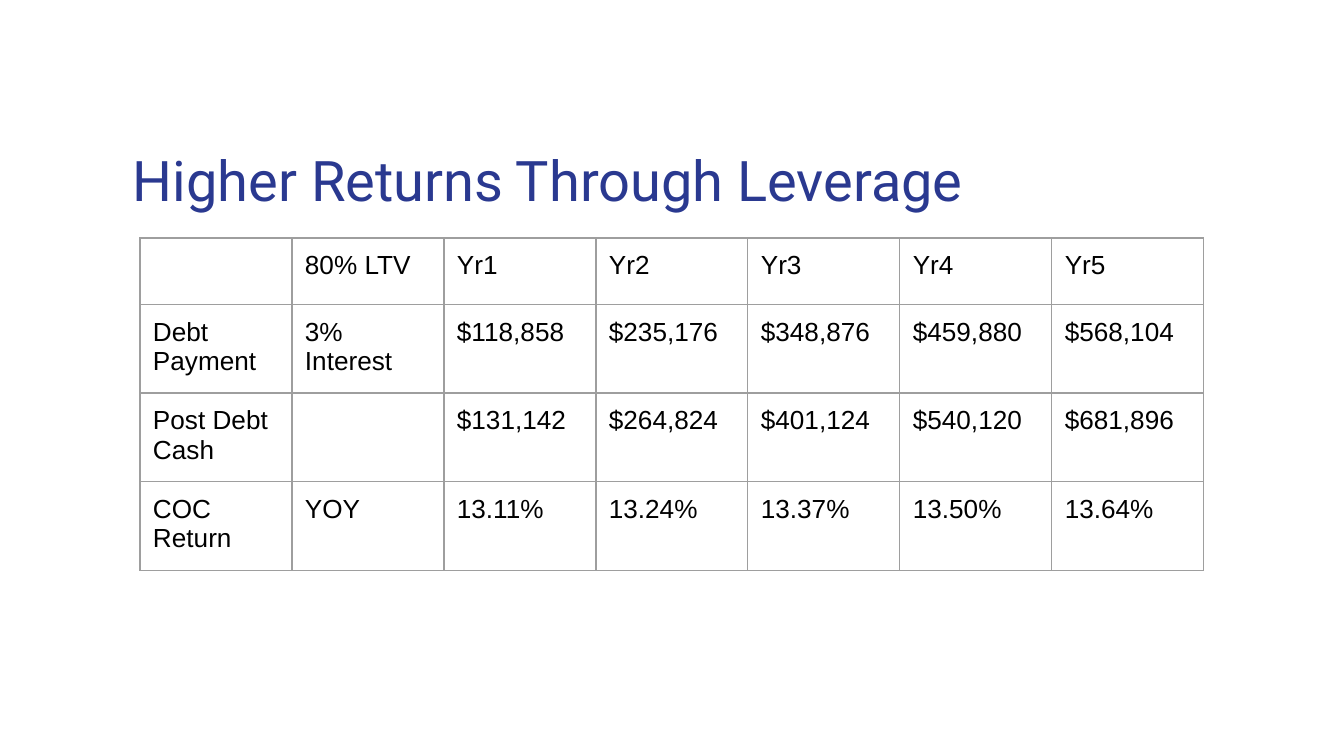
from lxml.etree import SubElement
from pptx import Presentation
from pptx.dml.color import RGBColor
from pptx.enum.text import MSO_ANCHOR
from pptx.oxml.ns import qn
from pptx.util import Pt

TITLE = "Higher Returns Through Leverage"
ROWS = [
    ["", "80% LTV", "Yr1", "Yr2", "Yr3", "Yr4", "Yr5"],
    ["Debt Payment", "3% Interest", "$118,858", "$235,176", "$348,876", "$459,880", "$568,104"],
    ["Post Debt Cash", "", "$131,142", "$264,824", "$401,124", "$540,120", "$681,896"],
    ["COC Return", "YOY", "13.11%", "13.24%", "13.37%", "13.50%", "13.64%"],
]
NAVY, BLACK, GREY = "2A3990", "000000", "9E9E9E"
LEFT, TOP, COL = 140, 238, 152
HEIGHTS = [64, 86, 86, 86]
PAD = 13


def px(n):
    return round(n * 914400 / 134.4)


def style(frame, font, size, color):
    for para in frame.paragraphs:
        for run in para.runs:
            run.font.name = font
            run.font.size = Pt(size)
            run.font.color.rgb = RGBColor.from_string(color)


def pad(box):
    box.margin_left = box.margin_right = px(PAD)
    box.margin_top = box.margin_bottom = px(PAD)


def border(cell, color, width):
    props = cell._tc.get_or_add_tcPr()
    for i, side in enumerate(("a:lnL", "a:lnR", "a:lnT", "a:lnB")):
        line = props.makeelement(qn(side), {"w": str(Pt(width))})
        fill = SubElement(line, qn("a:solidFill"))
        SubElement(fill, qn("a:srgbClr"), val=color)
        props.insert(i, line)


deck = Presentation()
deck.slide_width, deck.slide_height = px(1344), px(756)
slide = deck.slides.add_slide(deck.slide_layouts[6])

title = slide.shapes.add_textbox(px(120), px(133), px(1141), px(89)).text_frame
title.word_wrap = True
title.vertical_anchor = MSO_ANCHOR.TOP
pad(title)
title.text = TITLE
style(title, "Roboto", 30, NAVY)

count = len(ROWS[0])
table = slide.shapes.add_table(len(ROWS), count, px(LEFT), px(TOP),
                               px(COL * count), px(sum(HEIGHTS))).table
table.first_row = table.horz_banding = False
for col in table.columns:
    col.width = px(COL)
for r, (row, height) in enumerate(zip(ROWS, HEIGHTS)):
    table.rows[r].height = px(height)
    for c, text in enumerate(row):
        cell = table.cell(r, c)
        pad(cell)
        cell.fill.background()
        border(cell, GREY, 0.75)
        cell.text_frame.text = text
        style(cell.text_frame, "Arial", 14, BLACK)

deck.save("out.pptx")
